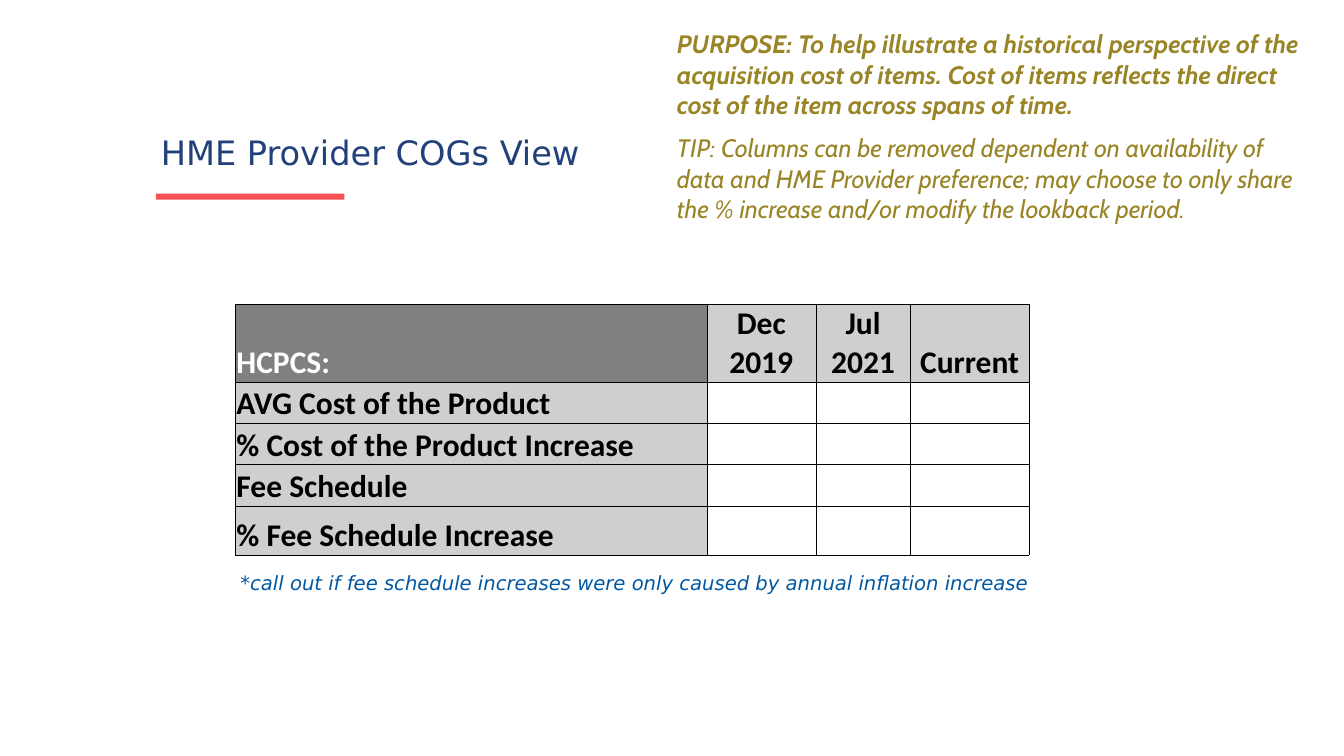
from pptx import Presentation, util as u
from pptx.dml.color import RGBColor
from pptx.enum import shapes, text
from pptx.oxml import parse_xml
from pptx.oxml.ns import nsdecls

COLORS = {
    "navy": "22417B", "blue": "0058A3", "gold": "998525", "red": "F75152",
    "black": "000000", "white": "FFFFFF", "dark": "808080", "light": "D0CECE",
}
HEADERS = ["HCPCS:", "Dec 2019", "Jul 2021", "Current"]
LABELS = ["AVG Cost of the Product", "% Cost of the Product Increase",
          "Fee Schedule", "% Fee Schedule Increase"]


class Deck:
    """Style and current slide, measured on a grid of 100 columns by 100 rows."""

    def __init__(self, width, height):
        self.prs = Presentation()
        self.prs.slide_width, self.prs.slide_height = u.Inches(width), u.Inches(height)
        self.slide = self.prs.slides.add_slide(self.prs.slide_layouts[5])

    def x(self, cols):
        return round(self.prs.slide_width * cols / 100)

    def y(self, rows):
        return round(self.prs.slide_height * rows / 100)

    def box(self, left, top, width, height):
        return self.x(left), self.y(top), self.x(width), self.y(height)

    def run(self, p, words, font, size, color, bold=False, italic=False):
        r = p.add_run()
        r.text = words
        r.font.name, r.font.size = font, u.Pt(size)
        r.font.bold, r.font.italic = bold, italic
        r.font.color.rgb = RGBColor.from_string(COLORS[color])

    def title(self, box, words):
        sp = self.slide.shapes.title
        sp.left, sp.top, sp.width, sp.height = self.box(*box)
        tf = sp.text_frame
        tf.vertical_anchor = text.MSO_ANCHOR.TOP
        tf.auto_size = text.MSO_AUTO_SIZE.NONE
        p = tf.paragraphs[0]
        p.alignment, p.line_spacing = text.PP_ALIGN.LEFT, u.Pt(130)
        self.run(p, words, "DejaVu Sans", 48, "navy")

    def bar(self, box, color):
        sp = self.slide.shapes.add_shape(shapes.MSO_SHAPE.RECTANGLE, *self.box(*box))
        sp.shadow.inherit = False
        sp.fill.solid()
        sp.fill.fore_color.rgb = RGBColor.from_string(COLORS[color])
        sp.line.fill.background()

    def note(self, box, paragraphs, font, size, color, gap=0, grow=False):
        tf = self.slide.shapes.add_textbox(*self.box(*box)).text_frame
        tf.word_wrap = True
        tf.auto_size = (text.MSO_AUTO_SIZE.SHAPE_TO_FIT_TEXT if grow
                        else text.MSO_AUTO_SIZE.NONE)
        for i, (words, bold) in enumerate(paragraphs):
            p = tf.add_paragraph() if i else tf.paragraphs[0]
            if i:
                p.space_before = u.Pt(gap)
            self.run(p, words, font, size, color, bold, True)

    def border(self, cell, side, points):
        cell._tc.get_or_add_tcPr().append(parse_xml(
            f'<a:ln{side} {nsdecls("a")} w="{u.Pt(points)}"><a:solidFill>'
            f'<a:srgbClr val="{COLORS["black"]}"/></a:solidFill></a:ln{side}>'))

    def cell(self, cell, words, fill, color, centered, heavy):
        for side in "LRTB":
            self.border(cell, side, 1 if side in heavy else 0.5)
        cell.fill.solid()
        cell.fill.fore_color.rgb = RGBColor.from_string(COLORS[fill])
        cell.margin_left = cell.margin_right = cell.margin_top = u.Inches(0.02)
        cell.margin_bottom = 0
        cell.vertical_anchor = text.MSO_ANCHOR.BOTTOM
        if words:
            p = cell.text_frame.paragraphs[0]
            p.alignment = text.PP_ALIGN.CENTER if centered else text.PP_ALIGN.LEFT
            self.run(p, words, "Calibri", 45, color, bold=True)

    def table(self, left, top, widths, heights, rows):
        table = self.slide.shapes.add_table(
            len(heights), len(widths),
            *self.box(left, top, sum(widths), sum(heights))).table
        table.first_row = table.horz_banding = False
        for column, width in zip(table.columns, widths):
            column.width = self.x(width)
        for row, height in zip(table.rows, heights):
            row.height = self.y(height)
        for r, row in enumerate(rows):
            for c, words in enumerate(row):
                corner = r == c == 0
                fill = "dark" if corner else "light" if words else "white"
                heavy = ("TB" if r == 0 else "T" if r == 1 else "") + ("" if c else "L")
                if r == 0 and c == len(row) - 1:
                    heavy += "R"
                if c == 0 and r == len(rows) - 1:
                    heavy += "B"
                self.cell(table.cell(r, c), words, fill,
                          "white" if corner else "black", c > 0, heavy)


def main():
    deck = Deck(26.66, 15)
    deck.bar((11.59, 25.6, 14.03, 0.8), "red")
    deck.title((11.59, 10.47, 81.13, 15.13), "HME Provider COGs View")
    deck.note((17.52, 75.13, 82.48, 24.87),
              [("*call out if fee schedule increases were only caused by "
                "annual inflation increase", False)],
              "DejaVu Sans", 28, "blue")
    rows = [HEADERS] + [[label, "", "", ""] for label in LABELS]
    deck.table(17.52, 40.2, [35.07, 8.1, 7.05, 8.81],
               [10.2, 5.47, 5.47, 5.47, 6.47], rows)
    deck.note((50, 3.47, 47.3, 30.73),
              [("PURPOSE: To help illustrate a historical perspective of the "
                "acquisition cost of items. Cost of items reflects the direct "
                "cost of the item across spans of time.", True),
               ("TIP: Columns can be removed dependent on availability of data "
                "and HME Provider preference; may choose to only share the % "
                "increase and/or modify the lookback period.", False)],
              "Cabin", 36, "gold", gap=19, grow=True)
    deck.prs.save("out.pptx")


if __name__ == "__main__":
    main()
